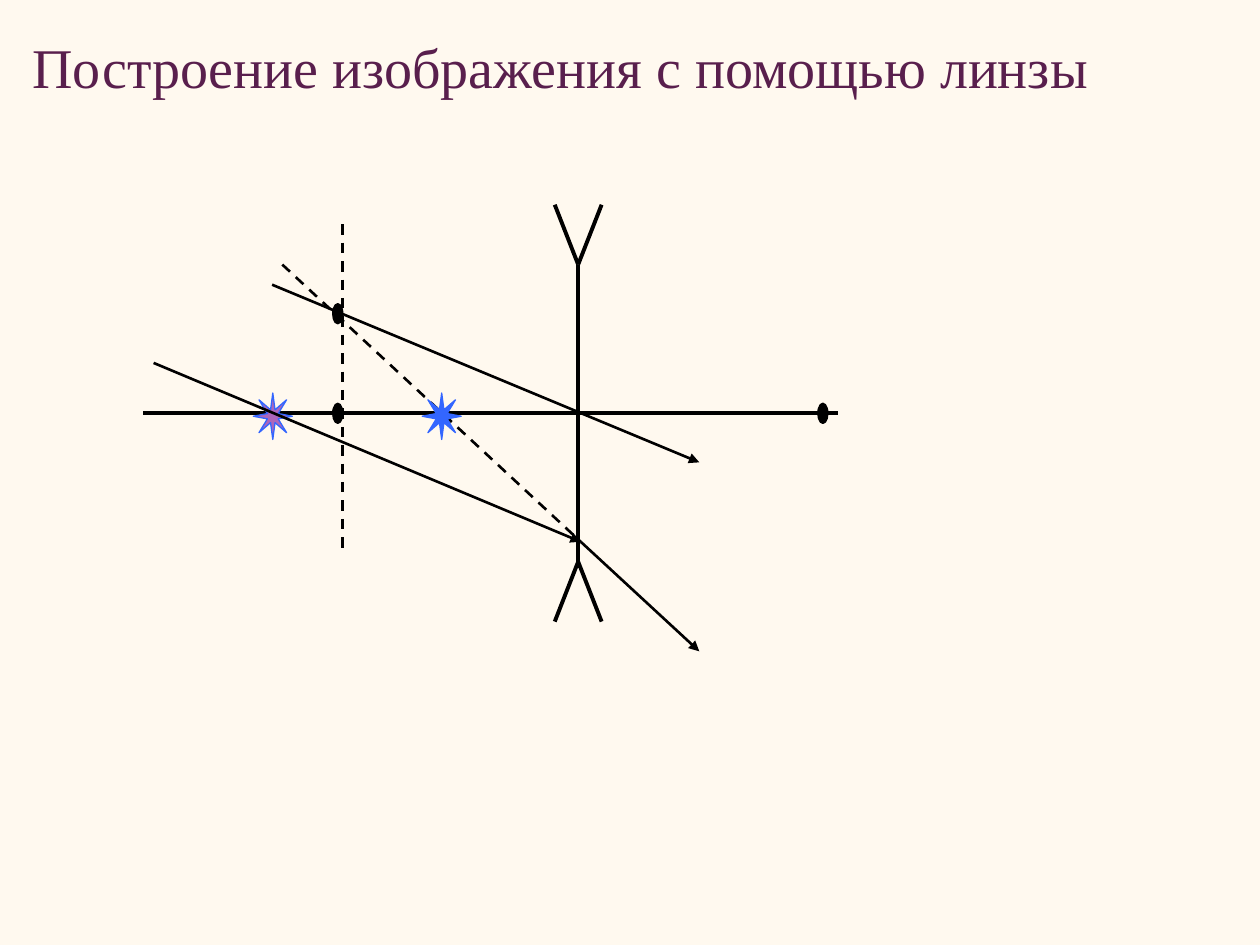
"""Build a slide showing how a diverging lens forms an image."""
from lxml import etree
from pptx import Presentation
from pptx.dml.color import RGBColor
from pptx.enum.dml import MSO_LINE
from pptx.enum.shapes import MSO_CONNECTOR, MSO_SHAPE
from pptx.enum.text import MSO_AUTO_SIZE
from pptx.oxml.ns import qn
from pptx.util import Pt

STRAIGHT = MSO_CONNECTOR.STRAIGHT
OVAL = MSO_SHAPE.OVAL
STAR = MSO_SHAPE.STAR_8_POINT
DASH = MSO_LINE.DASH
FIT_SHAPE = MSO_AUTO_SIZE.SHAPE_TO_FIT_TEXT

THEME = {
    "background": "FFF9EF", "title": "591F4D", "ink": "000000",
    "source": "AC66BB", "image": "3366FF",
    "font": "Times New Roman", "title_size": 32,
    "heavy": 2.25, "ray": 1.5, "outline": 0.75,
}

TITLE = "Построение изображения с помощью линзы"
AXIS_Y = 236.2
AXIS = ((82, AXIS_Y), (479, AXIS_Y))
LENS_X, LENS_TOP, LENS_BOTTOM, LENS_END = 330.4, 151.2, 321, 324.6
ARM_WIDTH, ARM_HEIGHT = 13.4, 34.2
FOCUS_X, FAR_FOCUS_X = 193, 470.2
FOCAL_PLANE = ((195.8, 128.2), (195.8, 315.4))
SIDE_FOCUS = (FOCUS_X, 179.3)
REFRACTION = (331.9, 309.6)
INCOMING_RAY = ((87.8, 207.4), REFRACTION)
CENTRAL_RAY = ((155.5, 162.7), (399.6, 264.2))
EXTENSION = ((161.3, 151.2), REFRACTION)
REFRACTED_RAY = (REFRACTION, (399.6, 372.2))
SOURCE = (155.9, 237.9)
IMAGE = (252.4, 237.9)
DOT_SIZE = (5.8, 11.5)
STAR_SIZE = (22.3, 26.6)


def color(name):
    return RGBColor.from_string(THEME[name])


def add_line(shapes, ends, width="ray", dash=None, arrow=False):
    (x1, y1), (x2, y2) = ends
    connector = shapes.add_connector(STRAIGHT, Pt(x1), Pt(y1), Pt(x2), Pt(y2))
    connector.line.color.rgb = color("ink")
    connector.line.width = Pt(THEME[width])
    if dash:
        connector.line.dash_style = dash
    properties = connector._element.spPr
    if arrow:
        etree.SubElement(properties.find(qn("a:ln")), qn("a:tailEnd"), type="triangle")
    etree.SubElement(properties, qn("a:effectLst"))


def add_mark(shapes, kind, center, size, fill="ink", line="ink"):
    (x, y), (width, height) = center, size
    shape = shapes.add_shape(
        kind, Pt(x - width / 2), Pt(y - height / 2), Pt(width), Pt(height))
    shape.shadow.inherit = False
    shape.fill.solid()
    shape.fill.fore_color.rgb = color(fill)
    shape.line.color.rgb = color(line)
    shape.line.width = Pt(THEME["outline"])
    if kind == STAR:
        shape.adjustments[0] = 0.15


def add_lens(shapes):
    group = shapes.add_group_shape()
    add_line(group.shapes, ((LENS_X, LENS_TOP), (LENS_X, LENS_END)), width="heavy")
    for y, direction in ((LENS_TOP, -1), (LENS_BOTTOM, 1)):
        for side in (-1, 1):
            tip = (LENS_X + side * ARM_WIDTH, y + direction * ARM_HEIGHT)
            add_line(group.shapes, ((LENS_X, y), tip), width="heavy")


def add_text(shapes, text, *, left, top, width, height, size, ink):
    box = shapes.add_textbox(Pt(left), Pt(top), Pt(width), Pt(height))
    frame = box.text_frame
    frame.word_wrap = True
    frame.auto_size = FIT_SHAPE
    paragraph = frame.paragraphs[0]
    paragraph.text = text
    paragraph.font.name = THEME["font"]
    paragraph.font.size = Pt(THEME[size])
    paragraph.font.color.rgb = color(ink)


def main():
    presentation = Presentation()
    presentation.slide_width, presentation.slide_height = Pt(720), Pt(540)
    slide = presentation.slides.add_slide(presentation.slide_layouts[6])
    slide.background.fill.solid()
    slide.background.fill.fore_color.rgb = color("background")
    shapes = slide.shapes

    add_line(shapes, AXIS, width="heavy")
    add_lens(shapes)
    for x in (FAR_FOCUS_X, FOCUS_X):
        add_mark(shapes, OVAL, (x, AXIS_Y), DOT_SIZE)
    add_mark(shapes, STAR, SOURCE, STAR_SIZE, fill="source", line="image")
    add_line(shapes, INCOMING_RAY, arrow=True)
    add_line(shapes, CENTRAL_RAY, arrow=True)
    add_line(shapes, FOCAL_PLANE, dash=DASH)
    add_mark(shapes, OVAL, SIDE_FOCUS, DOT_SIZE)
    add_line(shapes, EXTENSION, dash=DASH)
    add_line(shapes, REFRACTED_RAY, arrow=True)
    add_mark(shapes, STAR, IMAGE, STAR_SIZE, fill="image", line="image")
    add_text(shapes, TITLE, left=11.5, top=15.1, width=702.7, height=46.1,
             size="title_size", ink="title")
    presentation.save("out.pptx")


if __name__ == "__main__":
    main()
